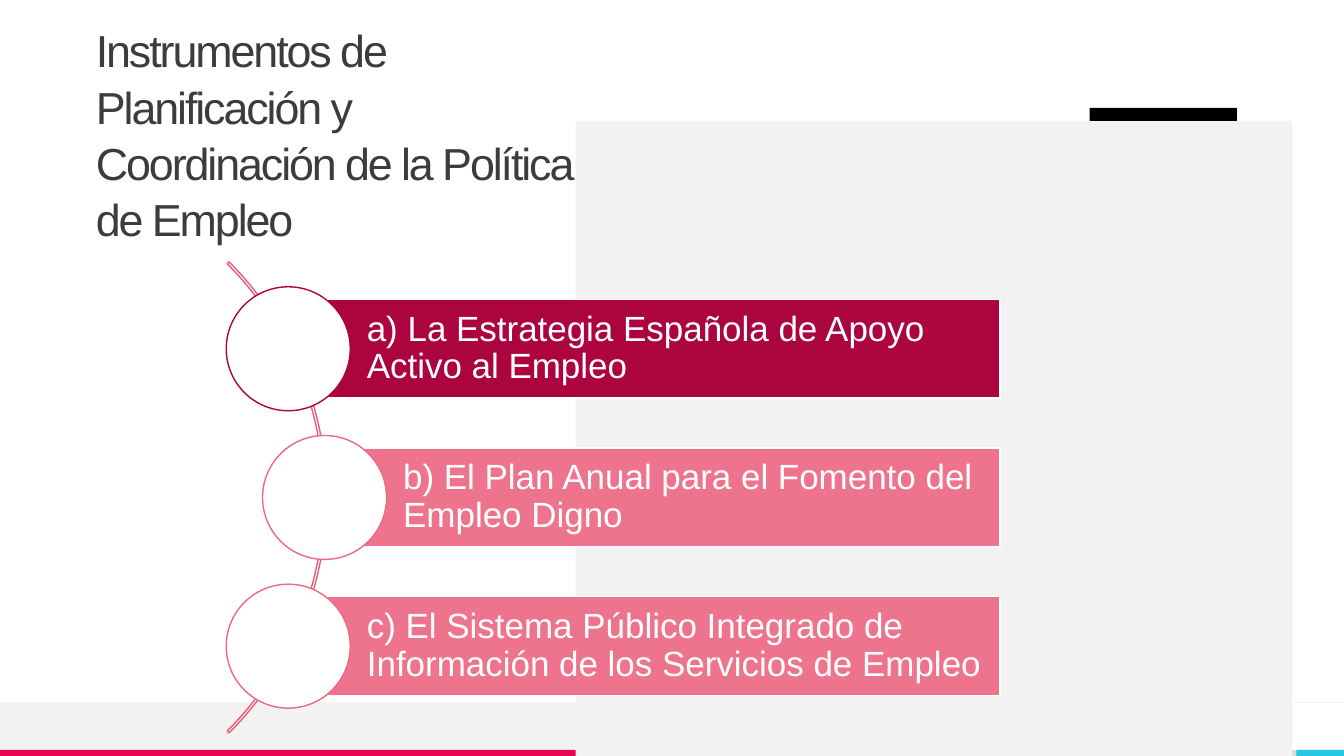
from dataclasses import dataclass

from lxml import etree
from pptx import Presentation
from pptx import util as u
from pptx.dml.color import RGBColor
from pptx.enum import shapes, text
from pptx.oxml.ns import qn

KIND = shapes.MSO_SHAPE


@dataclass(frozen=True)
class Theme:
    font: str = "Arial"
    title_size: float = 32
    item_size: float = 25
    outline: float = 1
    hairline: float = 0.5
    ink: str = "3C3C3C"
    white: str = "FFFFFF"
    black: str = "000000"
    panel: str = "F2F2F2"
    grey: str = "DADADA"
    red: str = "E80554"
    cyan: str = "25C6E3"
    wine: str = "AC043E"
    pink: str = "EE748D"
    ring: str = "ED6884"
    arc: str = "EA5E76"


class Sheet:
    """Draws on one page; every length is a percentage of the page size."""

    def __init__(self, deck, theme):
        self.deck, self.theme = deck, theme
        self.page = deck.slides.add_slide(deck.slide_layouts[5])

    def x(self, share):
        return u.Emu(round(self.deck.slide_width * share / 100))

    def y(self, share):
        return u.Emu(round(self.deck.slide_height * share / 100))

    def area(self, left, top, width, height):
        return self.x(left), self.y(top), self.x(width), self.y(height)

    def span(self, para, words, size, color):
        span = para.add_run()
        span.text = words
        span.font.name = self.theme.font
        span.font.size = u.Pt(size)
        span.font.color.rgb = RGBColor.from_string(color)
        return span

    def title(self, words, *area):
        box = self.page.shapes.title
        box.left, box.top, box.width, box.height = self.area(*area)
        frame = box.text_frame
        frame.word_wrap = True
        frame.auto_size = text.MSO_AUTO_SIZE.NONE
        frame.vertical_anchor = text.MSO_ANCHOR.BOTTOM
        para = frame.paragraphs[0]
        para.alignment = text.PP_ALIGN.LEFT
        para.line_spacing = 1.05
        span = self.span(para, words, self.theme.title_size, self.theme.ink)
        span.font._element.set("spc", "-150")

    def shape(self, kind, *area, fill=None, line=None):
        shape = self.page.shapes.add_shape(kind, *self.area(*area))
        shape.shadow.inherit = False
        if fill:
            shape.fill.solid()
            shape.fill.fore_color.rgb = RGBColor.from_string(fill)
        else:
            shape.fill.background()
        if line:
            shape.line.color.rgb = RGBColor.from_string(line)
            shape.line.width = u.Pt(self.theme.outline)
        else:
            shape.line.fill.background()
        return shape

    def rule(self, left, right, top, color):
        rule = self.page.shapes.add_connector(
            shapes.MSO_CONNECTOR.STRAIGHT,
            self.x(left), self.y(top), self.x(right), self.y(top))
        rule.line.color.rgb = RGBColor.from_string(color)
        rule.line.width = u.Pt(self.theme.hairline)
        etree.SubElement(rule._element.spPr, qn("a:effectLst"))

    def arc(self, *area, adjustments, line):
        arc = self.shape(KIND.BLOCK_ARC, *area, line=line)
        for index, value in enumerate(adjustments):
            arc.adjustments[index] = value

    def item(self, words, left, top, right, height, fill, ring):
        """A labelled bar with a circle centred on its left edge."""
        bar = self.shape(KIND.RECTANGLE, left, top, right - left, height,
                         fill=fill, line=self.theme.white)
        frame = bar.text_frame
        frame.word_wrap = True
        frame.vertical_anchor = text.MSO_ANCHOR.MIDDLE
        frame.margin_left = self.x(5.85)
        frame.margin_right = frame.margin_top = frame.margin_bottom = self.x(0.53)
        para = frame.paragraphs[0]
        para.alignment = text.PP_ALIGN.LEFT
        para.line_spacing = 0.9
        self.span(para, words, self.theme.item_size, self.theme.white)

        wide, tall = 9.23, 16.4
        self.shape(KIND.OVAL, left - wide / 2, top + (height - tall) / 2,
                   wide, tall, fill=self.theme.white, line=ring)


def main():
    deck = Presentation()
    deck.slide_width, deck.slide_height = u.Inches(13.333), u.Inches(7.5)
    theme = Theme()
    sheet = Sheet(deck, theme)

    backdrop = [
        (80.25, 99.2, 16.28, 0.8, theme.grey),
        (0, 92.93, 80.25, 6.27, theme.panel),
        (0, 99.2, 80.25, 0.8, theme.red),
        (96.45, 99.2, 3.55, 0.8, theme.cyan),
        (42.83, 16, 53.33, 84, theme.panel),
        (81.08, 14.27, 10.95, 1.73, theme.black),
    ]
    sheet.rule(0, 100, 92.93, theme.panel)
    for *area, color in backdrop:
        sheet.shape(KIND.RECTANGLE, *area, fill=color)

    sheet.title("Instrumentos de Planificación y Coordinación de la Política "
                "de Empleo", 6.38, 14.4, 38.48, 18.8)

    sheet.arc(-25.28, 21.73, 49.58, 88.13,
              adjustments=(189, 27, 0.004), line=theme.arc)
    items = [
        ("a) La Estrategia Española de Apoyo Activo al Empleo",
         21.45, theme.wine, theme.wine),
        ("b) El Plan Anual para el Fomento del Empleo Digno",
         24.15, theme.pink, theme.ring),
        ("c) El Sistema Público Integrado de Información de los Servicios "
         "de Empleo", 21.45, theme.pink, theme.ring),
    ]
    for row, (words, left, fill, ring) in enumerate(items):
        sheet.item(words, left, 39.6 + 19.67 * row, 74.4, 13.07, fill, ring)

    deck.save("out.pptx")


if __name__ == "__main__":
    main()
